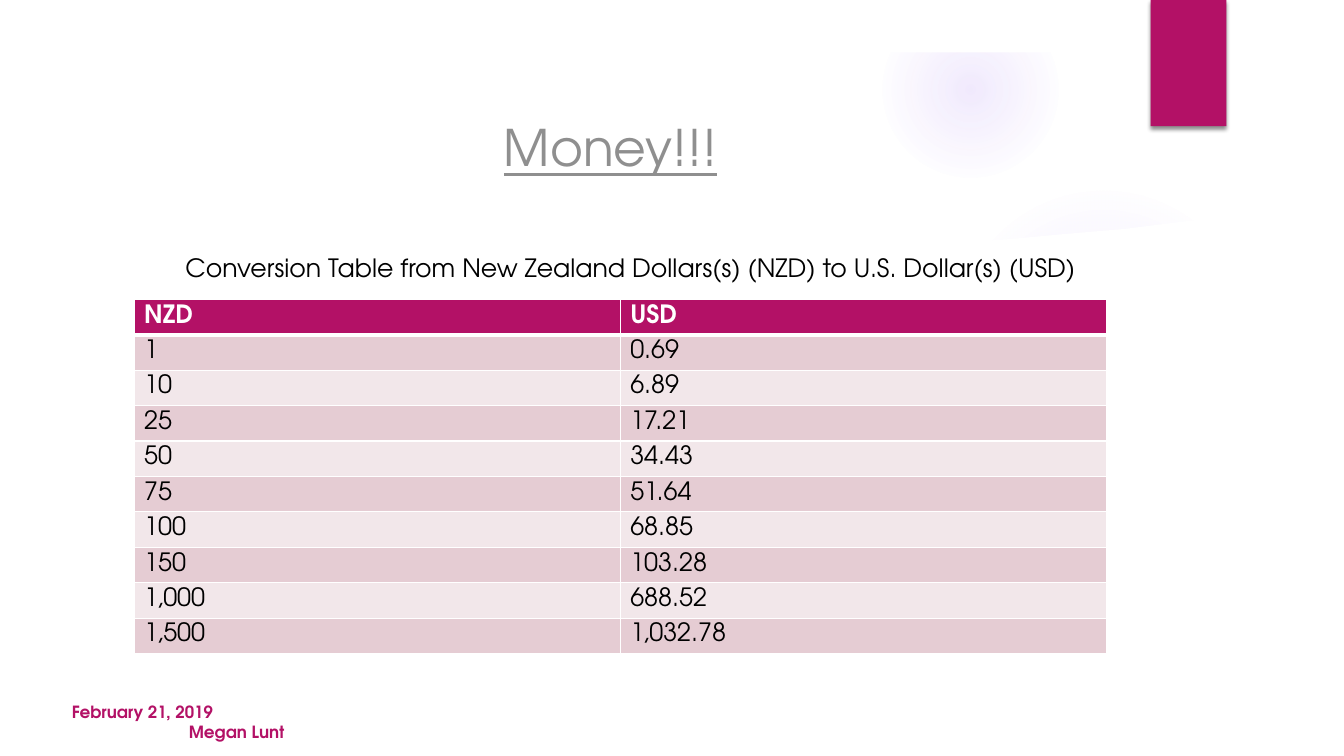
from lxml.etree import SubElement
from pptx import Presentation
from pptx.dml.color import RGBColor
from pptx.enum.shapes import MSO_SHAPE
from pptx.enum.text import MSO_ANCHOR, PP_ALIGN
from pptx.oxml import parse_xml
from pptx.oxml.ns import nsdecls, qn
from pptx.util import Cm, Pt

FONT = "TeX Gyre Adventor"
COLORS = {
    "magenta": "B31166", "violet": "9B6BF2", "white": "FFFFFF", "black": "000000",
    "gray": "8F8F8F", "rose": "E5CCD3", "pale": "F2E7EA",
}


def paint(shape, color):
    shape.fill.solid()
    shape.fill.fore_color.rgb = RGBColor.from_string(COLORS[color])
    shape.line.fill.background()
    shape.shadow.inherit = False


def write(paragraph, text, size, color, bold=False):
    paragraph.text = text
    font = paragraph.font
    font.name, font.size, font.bold = FONT, Pt(size), bold
    font.color.rgb = RGBColor.from_string(COLORS[color])


prs = Presentation()
prs.slide_width, prs.slide_height = Cm(33.87), Cm(19.05)
slide = prs.slides.add_slide(prs.slide_layouts[6])
shapes = slide.shapes

# Soft round glows: left, top, diameter, (stop, opacity) in percent
glows = [
    (23.9, 4.65, 7.82, [(0, 7), (36, 6), (69, 0)]),
    (22.23, 0.03, 4.45, [(0, 14), (36, 7), (73, 0)]),
]
for left, top, diameter, stops in glows:
    glow = shapes.add_shape(MSO_SHAPE.OVAL, Cm(left), Cm(top), Cm(diameter), Cm(diameter))
    glow.line.fill.background()
    glow.shadow.inherit = False
    stop_xml = "".join(
        f'<a:gs pos="{pos * 1000}"><a:srgbClr val="{COLORS["violet"]}">'
        f'<a:alpha val="{alpha * 1000}"/></a:srgbClr></a:gs>' for pos, alpha in stops)
    glow._element.spPr.find(qn("a:prstGeom")).addnext(parse_xml(
        f'<a:gradFill {nsdecls("a")}><a:gsLst>{stop_xml}</a:gsLst><a:path path="circle">'
        '<a:fillToRect l="50000" t="50000" r="50000" b="50000"/></a:path></a:gradFill>'))

# White panel with a curved top edge
panel_outline = [
    (1.27, 17.78), (32.61, 17.78), (32.61, 5.18), (31.19, 5.41), (29.77, 5.59),
    (28.35, 5.77), (26.92, 5.89), (25.5, 6.02), (24.1, 6.12), (22.7, 6.2),
    (20.65, 6.25), (17.98, 6.3), (14.8, 6.25), (11.28, 6.12), (8.15, 5.92),
    (5.49, 5.69), (3.43, 5.46), (1.27, 5.18),
]
outline = shapes.build_freeform(Cm(1.27), Cm(5.18))
outline.add_line_segments([(Cm(x), Cm(y)) for x, y in panel_outline])
paint(outline.convert_to_shape(), "white")

# White margin along the top
paint(shapes.add_shape(MSO_SHAPE.RECTANGLE, 0, 0, prs.slide_width, Cm(1.32)), "white")

# Ribbon with a drop shadow
ribbon = shapes.add_shape(MSO_SHAPE.RECTANGLE, Cm(29), 0, Cm(1.91), Cm(3.18))
paint(ribbon, "magenta")
ribbon._element.spPr.find(qn("a:effectLst")).append(parse_xml(
    f'<a:outerShdw {nsdecls("a")} blurRad="{Pt(3)}" dist="{Pt(2)}" dir="5400000" rotWithShape="0">'
    f'<a:srgbClr val="{COLORS["black"]}"><a:alpha val="45000"/></a:srgbClr></a:outerShdw>'))

# Title
title = shapes.add_textbox(Cm(3.22), Cm(2.71), Cm(24.33), Cm(1.96)).text_frame
title.word_wrap = True
title.vertical_anchor = MSO_ANCHOR.MIDDLE
heading = title.paragraphs[0]
write(heading, "Money!!!", 36, "gray")
heading.font.underline = True
heading.alignment = PP_ALIGN.CENTER

# Conversion table
rates = [
    ("NZD", "USD"), ("1", "0.69"), ("10", "6.89"), ("25", "17.21"), ("50", "34.43"),
    ("75", "51.64"), ("100", "68.85"), ("150", "103.28"), ("1,000", "688.52"),
    ("1,500", "1,032.78"),
]
ROW_HEIGHT = 0.85
table = shapes.add_table(len(rates), 2, Cm(3.38), Cm(7.54), Cm(24.5),
                         Cm(ROW_HEIGHT * len(rates))).table
for r, amounts in enumerate(rates):
    table.rows[r].height = Cm(ROW_HEIGHT)
    is_header = r == 0
    fill = "magenta" if is_header else ("pale", "rose")[r % 2]
    border_widths = {"lnL": 1, "lnR": 1, "lnT": 1, "lnB": 3 if is_header else 1}
    for c, amount in enumerate(amounts):
        cell = table.cell(r, c)
        cell.margin_top, cell.margin_bottom = Cm(0.13), 0
        write(cell.text_frame.paragraphs[0], amount, 18,
              "white" if is_header else "black", is_header)
        cell_props = cell._tc.get_or_add_tcPr()
        for side, width in border_widths.items():
            border = SubElement(cell_props, qn(f"a:{side}"), w=str(Pt(width)))
            SubElement(SubElement(border, qn("a:solidFill")), qn("a:srgbClr"), val=COLORS["white"])
        cell.fill.solid()
        cell.fill.fore_color.rgb = RGBColor.from_string(COLORS[fill])

# Date and author, the author indented on the second line
footer = shapes.add_textbox(Cm(1.56), Cm(17.77), Cm(10.72), Cm(0.84)).text_frame
footer.word_wrap = True
footer.vertical_anchor = MSO_ANCHOR.MIDDLE
write(footer.paragraphs[0], "February 21, 2019", 12, "magenta", True)
author = footer.add_paragraph()
author._p.get_or_add_pPr().set("marL", str(Cm(2.95)))
write(author, "Megan Lunt", 12, "magenta", True)

# Table caption
caption = shapes.add_textbox(Cm(4.42), Cm(6.23), Cm(23.29), Cm(1.02)).text_frame
caption.word_wrap = False
write(caption.paragraphs[0],
      "Conversion Table from New Zealand Dollars(s) (NZD) to U.S. Dollar(s) (USD)", 18, "black")

prs.save("out.pptx")
